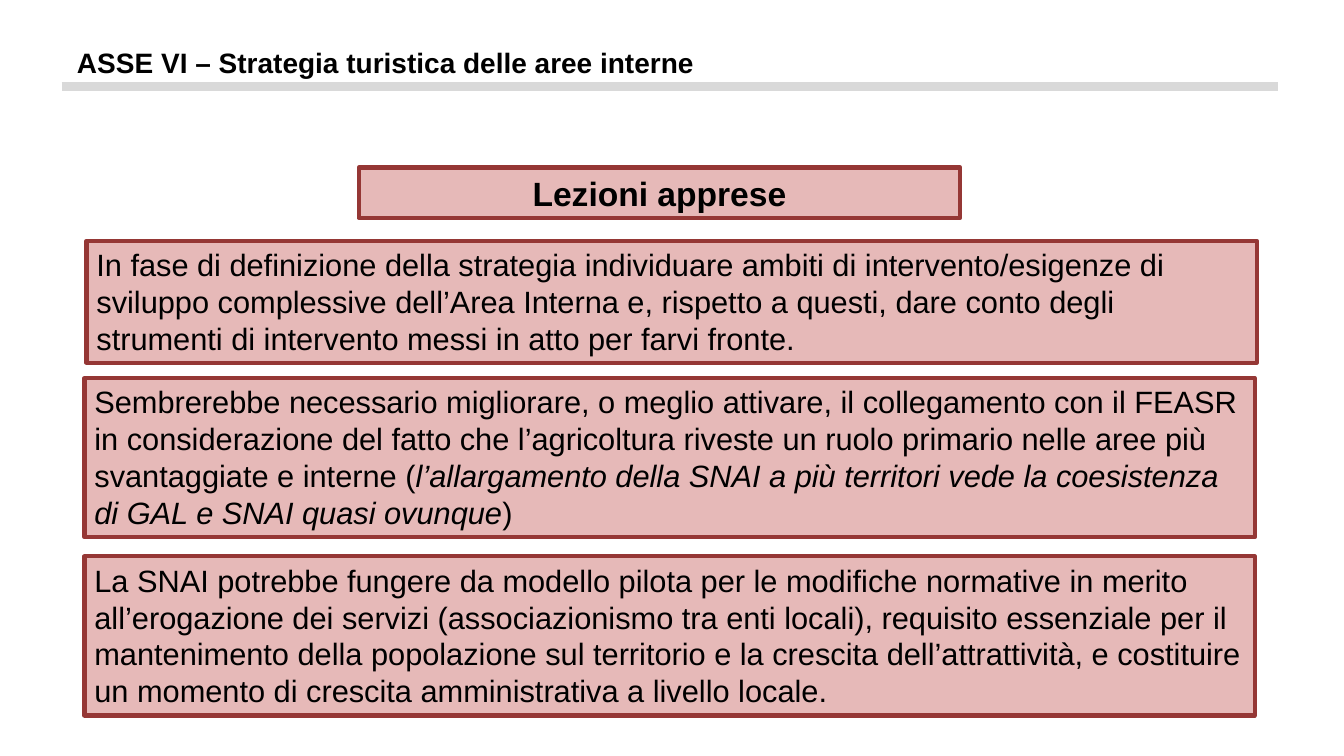
from dataclasses import dataclass
from typing import NamedTuple

from lxml.etree import SubElement
from pptx import Presentation
from pptx.dml.color import RGBColor
from pptx.enum.shapes import MSO_CONNECTOR as Connector, MSO_SHAPE as Shape
from pptx.enum.text import MSO_ANCHOR as Anchor, PP_ALIGN as Align
from pptx.oxml.ns import qn
from pptx.util import Cm, Pt


@dataclass(frozen=True)
class Theme:
    font: str = "Arial"
    ink: RGBColor = RGBColor(0x00, 0x00, 0x00)
    rule: RGBColor = RGBColor(0xD9, 0xD9, 0xD9)
    panel: RGBColor = RGBColor(0xE6, 0xB9, 0xB8)
    border: RGBColor = RGBColor(0x95, 0x37, 0x35)
    title_size: int = 20
    heading_size: int = 24
    body_size: int = 22
    rule_width: int = 6
    border_width: int = 3


class Box(NamedTuple):
    """Left, top, width and height in centimetres."""
    left: float
    top: float
    width: float
    height: float

    def lengths(self):
        return [Cm(value) for value in self]


THEME = Theme()
TITLE = "ASSE VI – Strategia turistica delle aree interne"
HEADING = "Lezioni apprese"
# Each lesson is a list of (text, italic) pieces.
LESSONS = [
    (Box(2.18, 6.07, 29.49, 3.07), [
        ("In fase di definizione della strategia individuare ambiti di "
         "intervento/esigenze di sviluppo complessive dell’Area Interna e, "
         "rispetto a questi, dare conto degli strumenti di intervento messi "
         "in atto per farvi fronte.", False)]),
    (Box(2.13, 9.53, 29.49, 4.01), [
        ("Sembrerebbe necessario migliorare, o meglio attivare, il "
         "collegamento con il FEASR in considerazione del fatto che "
         "l’agricoltura riveste un ruolo primario nelle aree più "
         "svantaggiate e interne (", False),
        ("l’allargamento della SNAI a più territori vede la coesistenza di "
         "GAL e SNAI quasi ovunque", True),
        (")", False)]),
    (Box(2.13, 14.02, 29.49, 4.01), [
        ("La SNAI potrebbe fungere da modello pilota per le modifiche "
         "normative in merito all’erogazione dei servizi (associazionismo "
         "tra enti locali), requisito essenziale per il mantenimento della "
         "popolazione sul territorio e la crescita dell’attrattività, e "
         "costituire un momento di crescita amministrativa a livello "
         "locale.", False)]),
]


def write(shape, pieces, *, size, bold=False, align=Align.LEFT, after=0, wrap=True):
    frame = shape.text_frame
    frame.word_wrap = wrap
    frame.vertical_anchor = Anchor.TOP
    para = frame.paragraphs[0]
    para.alignment = align
    para.space_after = Pt(after)
    for text, italic in pieces:
        span = para.add_run()
        span.text = text
        span.font.name = THEME.font
        span.font.size = Pt(size)
        span.font.bold = bold
        span.font.italic = italic
        span.font.color.rgb = THEME.ink


def add_header(page, box):
    """Title with a thick rule along the bottom of the box."""
    title = page.shapes.add_textbox(
        Cm(box.left + 0.08), Cm(box.top), Cm(16.18), Cm(1.8))
    write(title, [(TITLE, False)], size=THEME.title_size, bold=True,
          align=Align.CENTER, wrap=False)
    bottom = Cm(box.top + box.height)
    rule = page.shapes.add_connector(
        Connector.STRAIGHT, Cm(box.left), bottom, Cm(box.left + box.width), bottom)
    rule.line.color.rgb = THEME.rule
    rule.line.width = Pt(THEME.rule_width)
    SubElement(rule.element.spPr, qn("a:effectLst"))


def add_panel(page, box, pieces, **text_format):
    panel = page.shapes.add_shape(Shape.RECTANGLE, *box.lengths())
    panel.shadow.inherit = False
    panel.fill.solid()
    panel.fill.fore_color.rgb = THEME.panel
    panel.line.color.rgb = THEME.border
    panel.line.width = Pt(THEME.border_width)
    write(panel, pieces, **text_format)


def main():
    deck = Presentation()
    deck.slide_width, deck.slide_height = Cm(33.87), Cm(19.05)
    page = deck.slides.add_slide(deck.slide_layouts[6])
    add_header(page, Box(1.55, 1.02, 30.66, 1.16))
    for box, pieces in LESSONS:
        add_panel(page, box, pieces, size=THEME.body_size, after=6)
    add_panel(page, Box(9.04, 4.22, 15.16, 1.27), [(HEADING, False)],
              size=THEME.heading_size, bold=True, align=Align.CENTER)
    deck.save("out.pptx")


if __name__ == "__main__":
    main()
